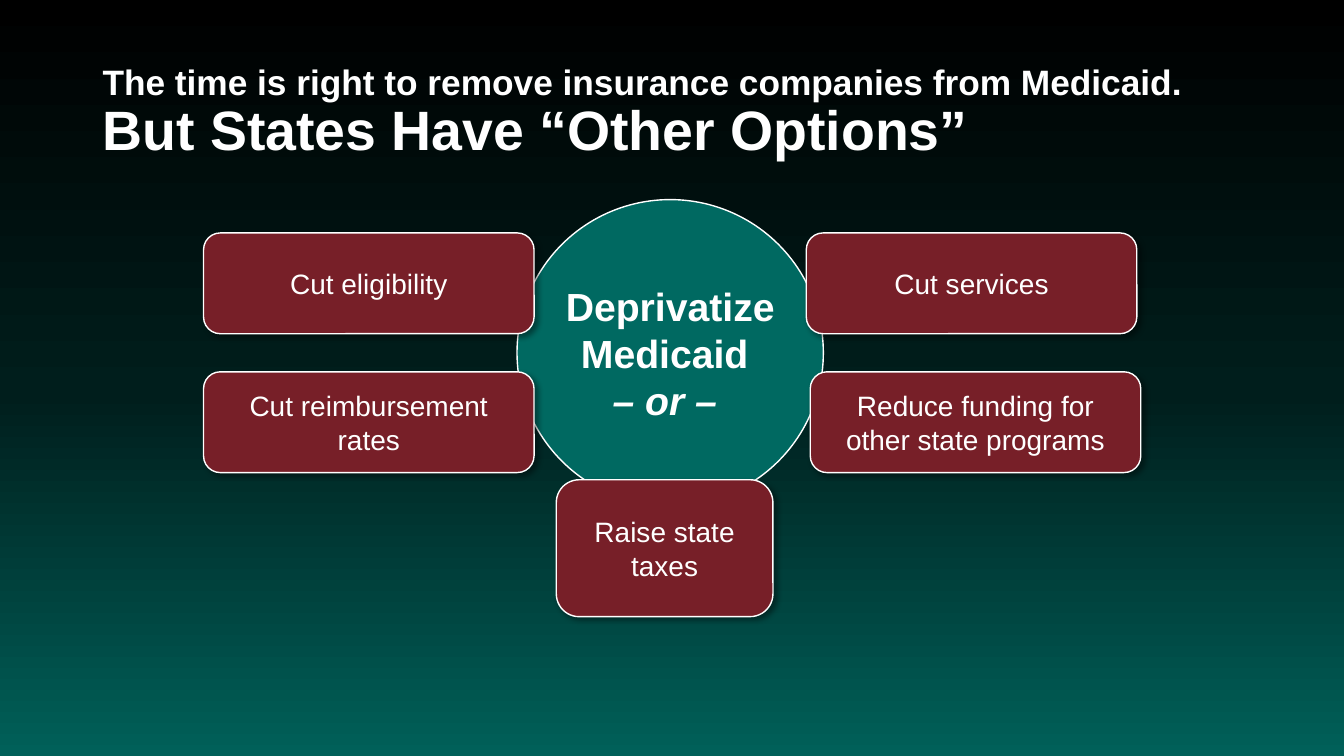
import copy

import pptx
import pptx.dml.color
import pptx.enum.shapes
import pptx.enum.text
import pptx.oxml
import pptx.oxml.ns
import pptx.util

Cm = pptx.util.Cm
Pt = pptx.util.Pt
RGB = pptx.dml.color.RGBColor
Kind = pptx.enum.shapes.MSO_SHAPE
Align = pptx.enum.text.PP_ALIGN
qn = pptx.oxml.ns.qn

WHITE = RGB(0xFF, 0xFF, 0xFF)
BLACK = RGB(0x00, 0x00, 0x00)
DARK = RGB(0x00, 0x1E, 0x1C)
DEEP = RGB(0x00, 0x60, 0x59)
TEAL = RGB(0x00, 0x69, 0x61)
WINE = RGB(0x77, 0x1F, 0x28)

SHADOW = (
    f'<a:outerShdw {pptx.oxml.ns.nsdecls("a")} blurRad="{Pt(4)}" dist="{Pt(3)}" '
    'dir="2700000" algn="tl" rotWithShape="0"><a:srgbClr val="000000">'
    '<a:alpha val="40000"/></a:srgbClr></a:outerShdw>'
)


class Deck:
    font = "Arial"

    def __init__(self):
        self.show = pptx.Presentation()
        self.show.slide_width = Cm(33.87)
        self.show.slide_height = Cm(19.05)
        self.slide = self.show.slides.add_slide(self.show.slide_layouts[5])

    def ground(self, stops):
        fill = self.slide.background.fill
        fill.gradient()
        fill.gradient_angle = 270
        first = fill.gradient_stops[0]
        holder = self.slide.background._cSld.find(".//" + qn("a:gsLst"))
        holder.append(copy.deepcopy(holder[0]))
        for stop, (place, color) in zip(fill.gradient_stops, stops):
            stop.position = place
            stop.color.rgb = color

    def style(self, run, size, bold=False):
        run.font.name = self.font
        run.font.size = Pt(size)
        run.font.bold = bold
        run.font.color.rgb = WHITE

    def title(self, lines, sizes, left, top, width, height):
        box = self.slide.shapes.title
        box.left, box.top, box.width, box.height = map(Cm, (left, top, width, height))
        frame = box.text_frame
        frame.text = "\v".join(lines)
        frame.word_wrap = True
        frame.auto_size = pptx.enum.text.MSO_AUTO_SIZE.NONE
        frame.vertical_anchor = pptx.enum.text.MSO_ANCHOR.MIDDLE
        para = frame.paragraphs[0]
        para.alignment = Align.LEFT
        para.line_spacing = 0.9
        for run, size in zip(para.runs, sizes):
            self.style(run, size, True)
        gap = para._p.find(qn("a:br"))
        gap.append(copy.deepcopy(para.runs[0].font._rPr))

    def shape(self, kind, text, fill, size, left, top, width, height, bold=False):
        item = self.slide.shapes.add_shape(kind, *map(Cm, (left, top, width, height)))
        item.shadow.inherit = False
        item.fill.solid()
        item.fill.fore_color.rgb = fill
        item.line.color.rgb = WHITE
        item.line.width = Pt(1)
        frame = item.text_frame
        frame.text = text
        frame.word_wrap = True
        frame.vertical_anchor = pptx.enum.text.MSO_ANCHOR.MIDDLE
        for para in frame.paragraphs:
            para.alignment = Align.CENTER
            self.style(para.runs[0], size, bold)
        return item

    def hub(self, text, left, top, width):
        item = self.shape(Kind.OVAL, text, TEAL, 28, left, top, width, width, True)
        frame = item.text_frame
        frame.margin_left = frame.margin_right = Cm(0)
        frame.paragraphs[-1].runs[0].font.italic = True

    def card(self, text, left, top, width=8.33, height=2.54):
        item = self.shape(
            Kind.ROUNDED_RECTANGLE, text, WINE, 20, left, top, width, height
        )
        effect = item._element.spPr.find(qn("a:effectLst"))
        effect.append(pptx.oxml.parse_xml(SHADOW))


def main():
    deck = Deck()
    deck.ground([(0, BLACK), (0.52, DARK), (1, DEEP)])
    deck.title(
        [
            "The time is right to remove insurance companies from Medicaid.",
            "But States Have “Other Options”",
        ],
        (25.2, 39.6), 2.33, 1.02, 29.21, 3.68,
    )
    deck.hub("Deprivatize Medicaid \n– or – ", 13.03, 5.03, 7.72)
    high, low = 5.87, 9.37
    deck.card("Reduce funding for other state programs", 20.42, low)
    deck.card("Cut services", 20.32, high)
    deck.card("Cut eligibility", 5.13, high)
    deck.card("Cut reimbursement rates", 5.13, low)
    deck.card("Raise state taxes", 14.02, 12.09, 5.46, 3.45)
    deck.show.save("out.pptx")


if __name__ == "__main__":
    main()
